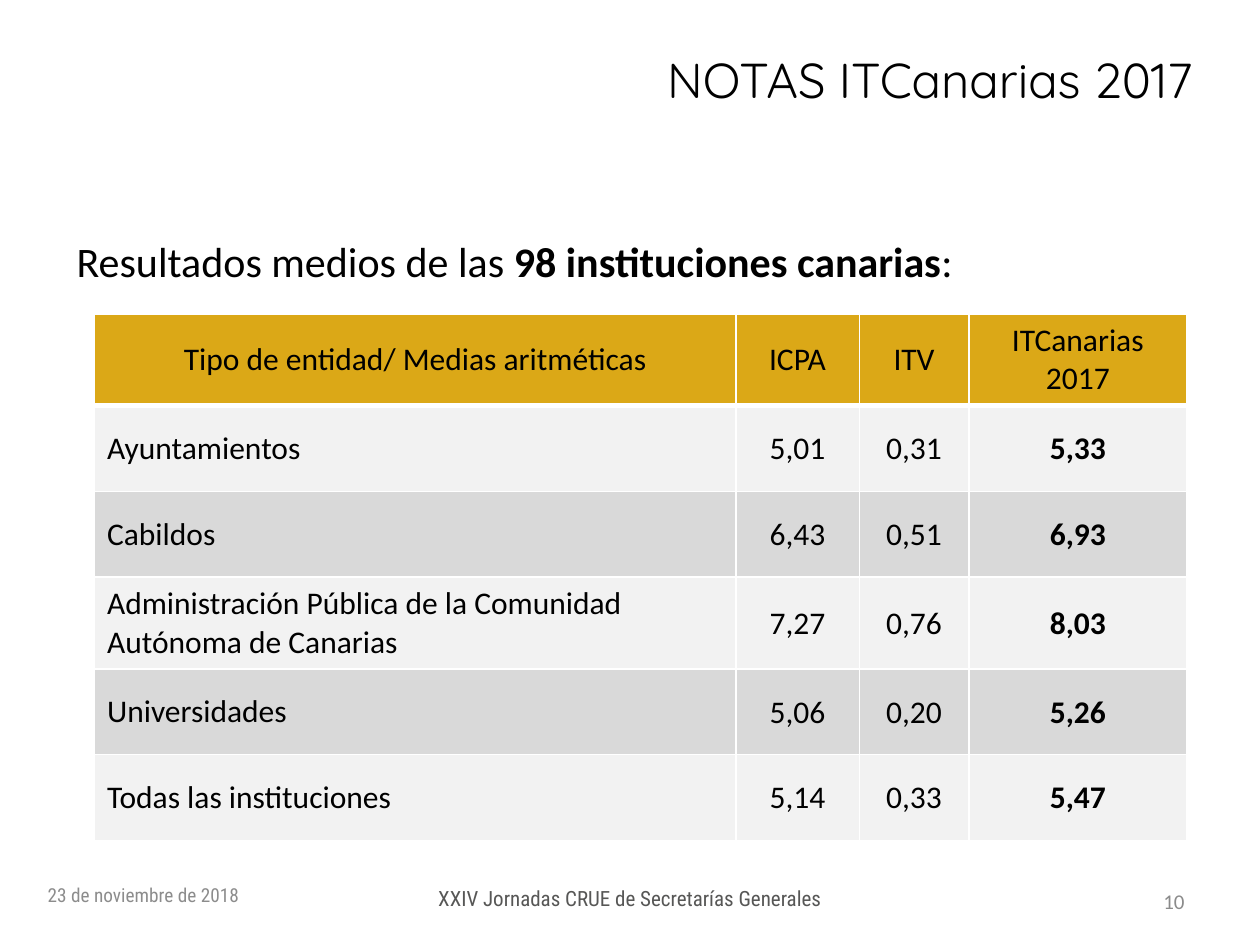
from lxml import etree
from pptx import Presentation
from pptx.dml.color import RGBColor
from pptx.enum.text import MSO_ANCHOR, MSO_AUTO_SIZE, PP_ALIGN
from pptx.oxml.ns import qn
from pptx.util import Inches, Pt

LEFT, CENTER, RIGHT, JUSTIFY = PP_ALIGN.LEFT, PP_ALIGN.CENTER, PP_ALIGN.RIGHT, PP_ALIGN.JUSTIFY
TOP, MIDDLE = MSO_ANCHOR.TOP, MSO_ANCHOR.MIDDLE

COLORS = {
    "text": "000000",
    "number": "8B8B8B",
    "date": "8C8C8C",
    "footer": "575756",
    "header": "DBA817",
    "light": "F2F2F2",
    "dark": "D9D9D9",
    "border": "FFFFFF",
}


def write(tf, *texts, size=18, font="Calibri", color="text", align=LEFT, bold=(), spacing=None):
    """Write one paragraph with a run per text; bold holds the indexes of the bold runs."""
    p = tf.paragraphs[0]
    p.alignment = align
    if spacing:
        p.line_spacing = spacing
    for i, text in enumerate(texts):
        r = p.add_run()
        r.text = text
        r.font.size = Pt(size)
        r.font.name = font
        r.font.bold = i in bold
        r.font.color.rgb = RGBColor.from_string(COLORS[color])


def set_borders(cell, bottom=1):
    """Give the cell white borders, 1 pt wide except for the bottom one."""
    tcPr = cell._tc.get_or_add_tcPr()
    for side, width in (("L", 1), ("R", 1), ("T", 1), ("B", bottom)):
        ln = etree.SubElement(tcPr, qn(f"a:ln{side}"), w=str(Pt(width)))
        fill = etree.SubElement(ln, qn("a:solidFill"))
        etree.SubElement(fill, qn("a:srgbClr"), val=COLORS["border"])


prs = Presentation()
prs.slide_width, prs.slide_height = Inches(10), Inches(7.5)
s = prs.slides.add_slide(prs.slide_layouts[5])

# Title
title = s.shapes.title
title.left, title.top, title.width, title.height = Inches(4.76), Inches(0), Inches(5.24), Inches(1.25)
title.text_frame.auto_size = MSO_AUTO_SIZE.NONE
title.text_frame.vertical_anchor = MIDDLE
write(title.text_frame, "NOTAS ITCanarias 2017", size=28, font="Quicksand", align=CENTER)

# Introduction and footer
condensed = "Roboto Condensed"
text_boxes = [
    ((0.51, 1.62, 8.82, 0.64), TOP,
     ("Resultados medios de las ", "98 instituciones canarias", ":"),
     dict(size=24, align=JUSTIFY, bold=(1,), spacing=1.5)),
    ((0.28, 6.9, 2.33, 0.4), MIDDLE, ("23 de noviembre de 2018",),
     dict(size=11, font=condensed, color="date")),
    ((3.03, 6.98, 3.94, 0.31), TOP, ("XXIV Jornadas CRUE de Secretarías Generales",),
     dict(size=12, font=condensed, color="footer", align=CENTER)),
    ((8.94, 6.95, 0.56, 0.4), MIDDLE, ("10",),
     dict(size=12, color="number", align=RIGHT)),
]
for box, anchor, texts, style in text_boxes:
    tf = s.shapes.add_textbox(*map(Inches, box)).text_frame
    tf.word_wrap = True
    tf.vertical_anchor = anchor
    write(tf, *texts, **style)

# Table of average marks
rows = [
    ("Tipo de entidad/ Medias aritméticas", "ICPA", "ITV", "ITCanarias 2017"),
    ("Ayuntamientos", "5,01", "0,31", "5,33"),
    ("Cabildos", "6,43", "0,51", "6,93"),
    ("Administración Pública de la Comunidad Autónoma de Canarias", "7,27", "0,76", "8,03"),
    ("Universidades", "5,06", "0,20", "5,26"),
    ("Todas las instituciones", "5,14", "0,33", "5,47"),
]
col_widths = [5.09, 0.98, 0.87, 1.73]
row_heights = [0.73, 0.68, 0.68, 0.73, 0.68, 0.68]
table = s.shapes.add_table(len(rows), len(col_widths), Inches(0.75), Inches(2.49),
                           Inches(8.66), Inches(4.17)).table
for column, width in zip(table.columns, col_widths):
    column.width = Inches(width)
for row, height in zip(table.rows, row_heights):
    row.height = Inches(height)

for i, row in enumerate(rows):
    header = i == 0
    fill = "header" if header else ("dark", "light")[i % 2]
    for j, text in enumerate(row):
        cell = table.cell(i, j)
        cell.vertical_anchor = MIDDLE
        if not header and j > 0:
            cell.margin_left = cell.margin_top = cell.margin_right = Inches(0.01)
            cell.margin_bottom = Inches(0)
        set_borders(cell, bottom=3 if header else 1)
        cell.fill.solid()
        cell.fill.fore_color.rgb = RGBColor.from_string(COLORS[fill])
        write(cell.text_frame, text, align=CENTER if header or j > 0 else LEFT,
              bold=(0,) if not header and j == 3 else ())

prs.save("out.pptx")
